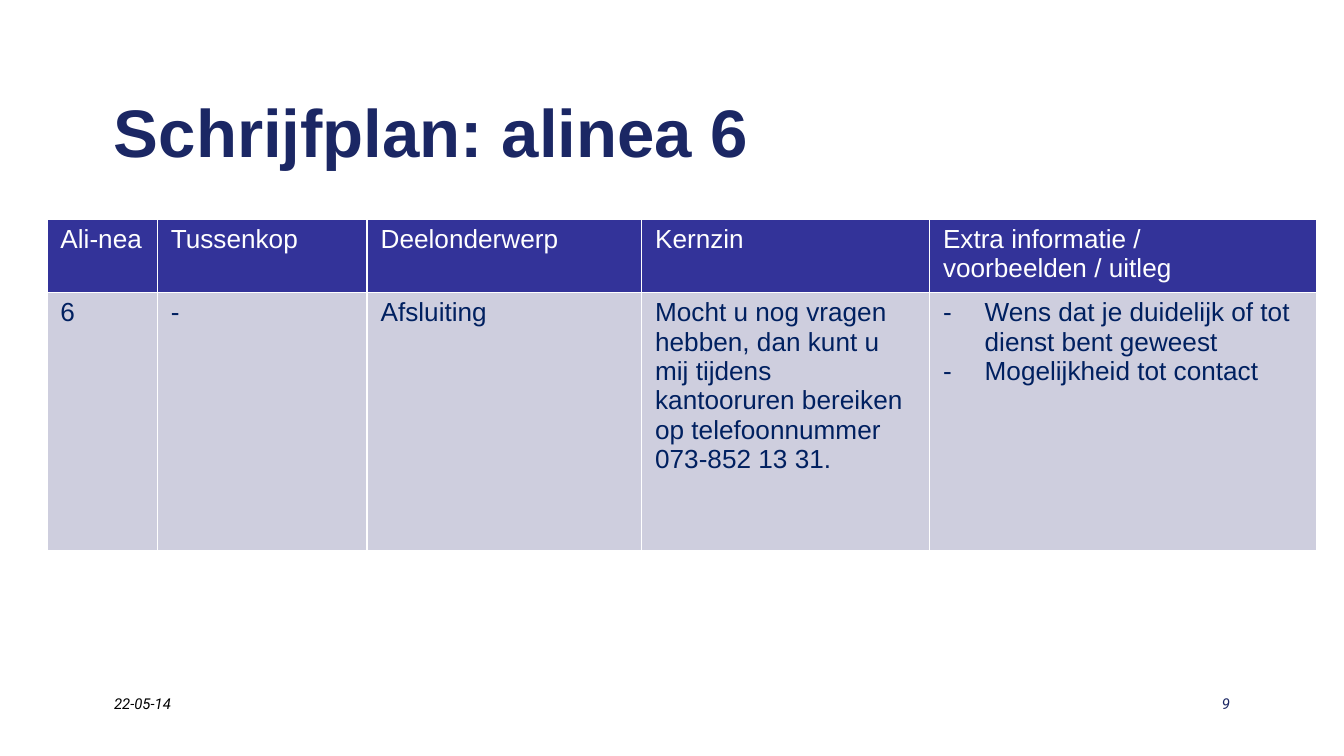
from typing import NamedTuple

from lxml import etree
from pptx import Presentation
from pptx import util as u
from pptx.dml.color import RGBColor
from pptx.enum import text
from pptx.oxml.ns import qn

WIDE = u.Inches(10)
HIGH = WIDE * 9 // 16
TALL = 10 * 9 / 16
NAVY, WHITE = "1B2764", "FFFFFF"
LEFT, MID = text.PP_ALIGN.LEFT, text.MSO_ANCHOR.MIDDLE
RIGHT, TOP = text.PP_ALIGN.RIGHT, text.MSO_ANCHOR.TOP


class Font(NamedTuple):
    name: str
    size: float
    hue: str
    bold: bool = False
    slant: bool = False


class Label(NamedTuple):
    words: str
    left: float
    top: float
    width: float
    height: float
    font: Font
    align: text.PP_ALIGN = LEFT
    anchor: text.MSO_ANCHOR = TOP


class Row(NamedTuple):
    height: float
    fill: str
    font: Font
    cells: list


LABELS = [
    Label("Schrijfplan: alinea 6", 0.75 / 10, 0.5 / TALL, 8.5 / 10, 0.94 / TALL,
          Font("Arial", 36, NAVY, bold=True), anchor=MID),
    Label("22-05-14", 0.75 / 10, 5.12 / TALL, 2.08 / 10, 0.38 / TALL,
          Font("Roboto", 8, "000000", slant=True)),
    Label("9", 7.17 / 10, 5.12 / TALL, 2.08 / 10, 0.38 / TALL,
          Font("Roboto", 8, NAVY, slant=True), RIGHT),
]

SPAN = 9.45 / 10
COLS = [0.82, 1.56, 2.04, 2.14, 2.88]
ROWS = [
    Row(0.53 / TALL, "333399", Font("Arial", 14, WHITE),
        ["Ali-nea", "Tussenkop", "Deelonderwerp", "Kernzin",
         "Extra informatie / voorbeelden / uitleg"]),
    Row(1.92 / TALL, "CECEDE", Font("Arial", 14, "002060"),
        ["6", "-", "Afsluiting",
         "Mocht u nog vragen hebben, dan kunt u mij tijdens kantooruren "
         "bereiken op telefoonnummer 073-852 13 31.",
         ["Wens dat je duidelijk of tot dienst bent geweest",
          "Mogelijkheid tot contact"]]),
]


def color(hue: str) -> RGBColor:
    return RGBColor.from_string(hue)


def across(share: float) -> int:
    return round(WIDE * share)


def down(share: float) -> int:
    return round(HIGH * share)


def style(para, font: Font) -> None:
    face = para.font
    face.name, face.size = font.name, u.Pt(font.size)
    face.bold, face.italic = font.bold, font.slant
    face.color.rgb = color(font.hue)


def bullet(para) -> None:
    props = para._p.get_or_add_pPr()
    props.set("marL", str(u.Inches(0.31)))
    props.set("indent", str(-u.Inches(0.31)))
    etree.SubElement(props, qn("a:buFont"), typeface="Arial")
    etree.SubElement(props, qn("a:buChar"), char="-")


def border(cell) -> None:
    props = cell._tc.get_or_add_tcPr()
    for side in "LRTB":
        line = etree.SubElement(props, qn(f"a:ln{side}"), w=str(u.Pt(1)))
        fill = etree.SubElement(line, qn("a:solidFill"))
        etree.SubElement(fill, qn("a:srgbClr"), val=WHITE)


def write(slide, label: Label) -> None:
    box = slide.shapes.add_textbox(across(label.left), down(label.top),
                                   across(label.width), down(label.height))
    frame = box.text_frame
    frame.word_wrap, frame.vertical_anchor = True, label.anchor
    para = frame.paragraphs[0]
    para.text, para.alignment = label.words, label.align
    style(para, label.font)


def fill_cell(cell, words: str | list, row: Row) -> None:
    border(cell)
    cell.fill.solid()
    cell.fill.fore_color.rgb = color(row.fill)
    cell.margin_left = cell.margin_right = u.Inches(0.1)
    cell.margin_top = cell.margin_bottom = u.Inches(0.04)
    listed = isinstance(words, list)
    cell.text = "\n".join(words) if listed else words
    for para in cell.text_frame.paragraphs:
        if listed:
            bullet(para)
        style(para, row.font)


def draw_plan(slide) -> None:
    high = sum(row.height for row in ROWS)
    plan = slide.shapes.add_table(len(ROWS), len(COLS), across(0.35 / 10),
                                  down(1.63 / TALL), across(SPAN),
                                  down(high)).table
    for col, part in zip(plan.columns, COLS):
        col.width = across(SPAN * part / sum(COLS))
    for line, row in zip(plan.rows, ROWS):
        line.height = down(row.height)
        for cell, words in zip(line.cells, row.cells):
            fill_cell(cell, words, row)


def main() -> None:
    deck = Presentation()
    deck.slide_width, deck.slide_height = WIDE, HIGH
    slide = deck.slides.add_slide(deck.slide_layouts[6])
    for label in LABELS:
        write(slide, label)
    draw_plan(slide)
    deck.save("out.pptx")


if __name__ == "__main__":
    main()
